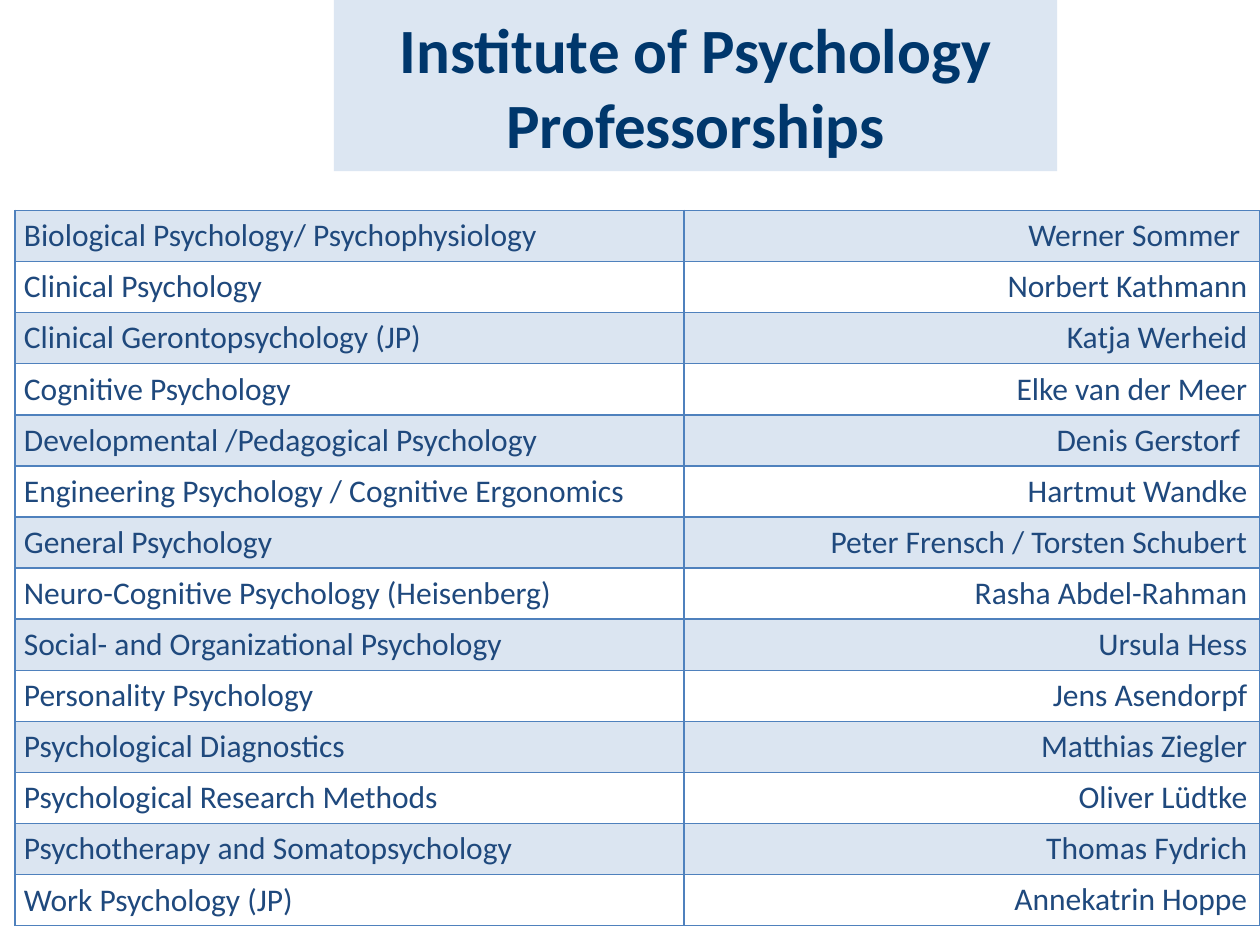
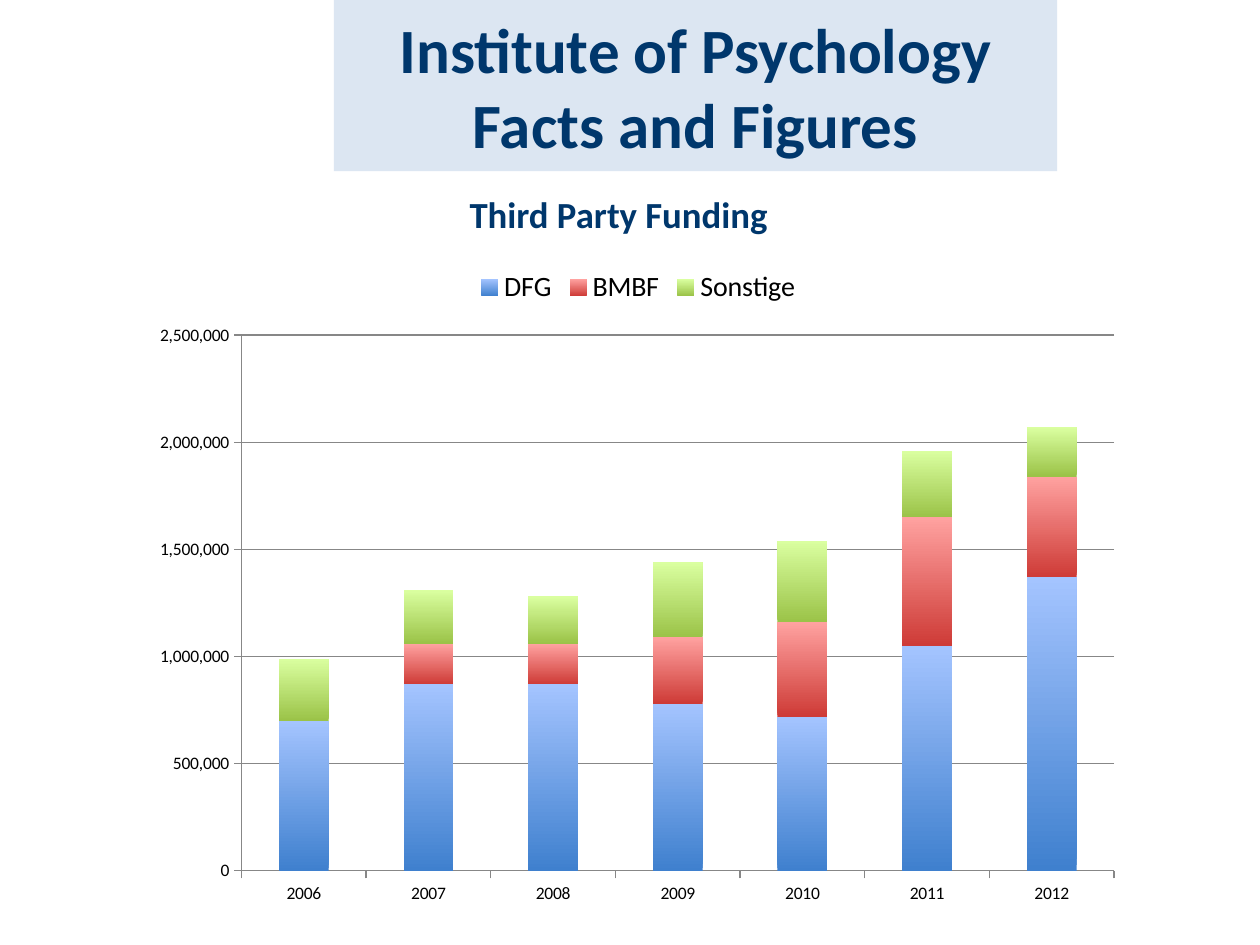
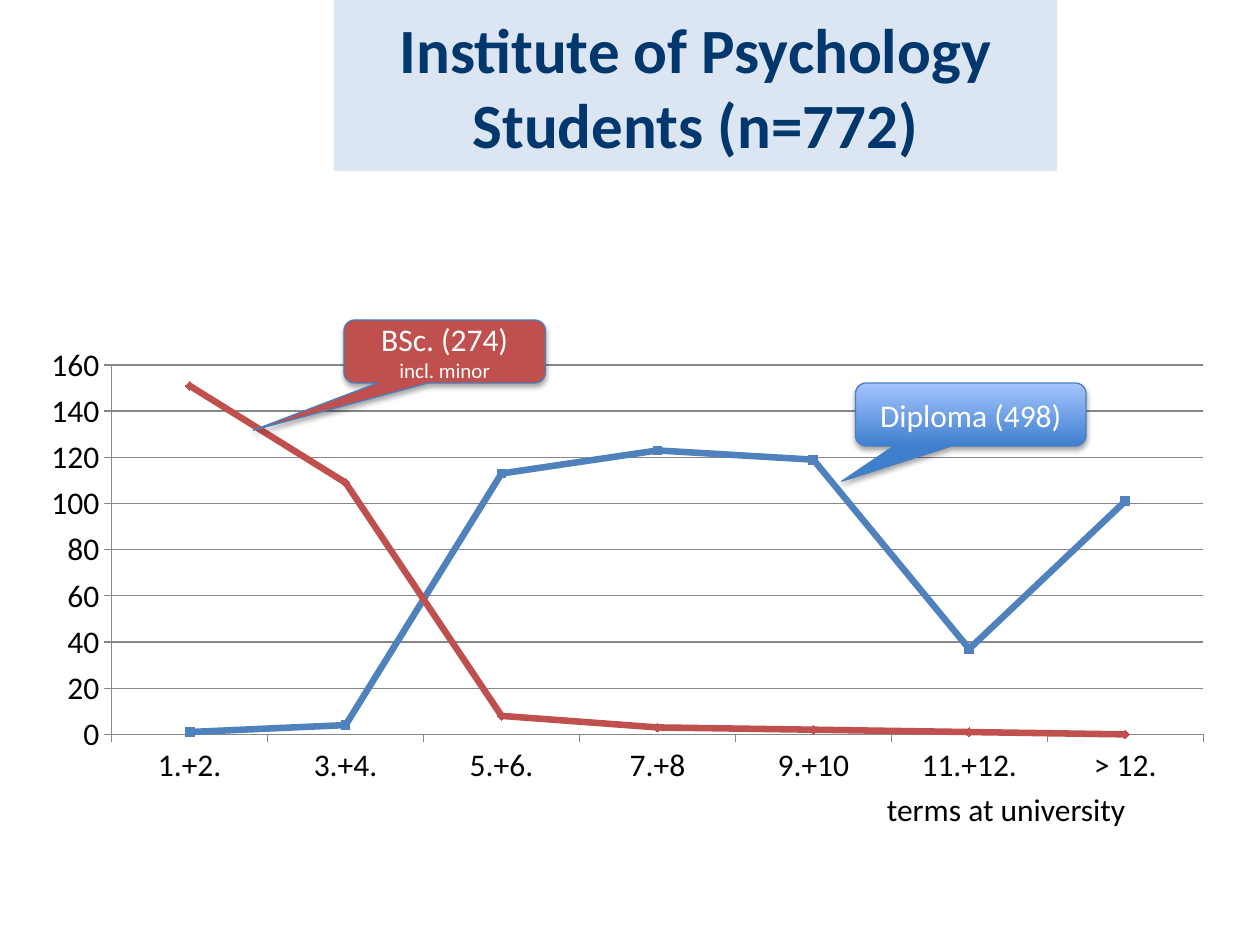
from dataclasses import dataclass

from lxml.etree import SubElement
from pptx import Presentation
from pptx.chart.data import CategoryChartData
from pptx.dml.color import RGBColor
from pptx.enum.chart import XL_CHART_TYPE, XL_LEGEND_POSITION, XL_MARKER_STYLE, XL_TICK_MARK
from pptx.enum.shapes import MSO_SHAPE
from pptx.enum.text import MSO_ANCHOR, MSO_AUTO_SIZE, PP_ALIGN
from pptx.oxml import parse_xml
from pptx.oxml.ns import nsdecls, qn
from pptx.util import Inches, Pt

COLUMNS, ROWS = 100, 75
SLIDE_WIDTH, SLIDE_HEIGHT = Inches(10), Inches(7.5)


class Theme:
    font = "Calibri"
    band = "DCE6F2"
    navy = "00376C"
    table_text = "1F497D"
    blue = "4F81BD"
    red = "C0504D"
    outline = "4B7EBC"
    axis = "878787"
    black = "000000"
    white = "FFFFFF"
    blue_shade = ("3F80CE", "A4C4FF")
    red_shade = ("CE3B37", "FFA2A0")
    green_shade = ("9BC348", "DAFFA0")
    title = {"size": Pt(36), "bold": True}
    heading = {"size": Pt(21), "bold": True}
    body = {"size": Pt(18)}
    legend = {"size": Pt(16)}
    note = {"size": Pt(12)}
    tick = {"size": Pt(10)}
    tight_frame = {
        "margin_left": Inches(0.08), "margin_right": Inches(0.08),
        "margin_top": Inches(0.04), "margin_bottom": Inches(0.04),
        "word_wrap": True,
    }


@dataclass(frozen=True)
class Box:
    left: float
    top: float
    width: float
    height: float

    def inner(self, left, top, width, height):
        return Box(self.left + left, self.top + top, width, height)

    def place(self):
        column, row = SLIDE_WIDTH / COLUMNS, SLIDE_HEIGHT / ROWS
        return (round(self.left * column), round(self.top * row),
                round(self.width * column), round(self.height * row))


BAND = Box(26.5, 0, 57.4, 13.6)
PROFESSORSHIPS = Box(1.2, 16.7, 98.8, 56)
FUNDING = Box(11.3, 14.8, 78.7, 58)
STUDENTS = Box(2.2, 26.8, 95.2, 36.2)

PROFESSORS = [
    ("Biological Psychology/ Psychophysiology", "Werner Sommer "),
    ("Clinical Psychology", "Norbert Kathmann"),
    ("Clinical Gerontopsychology (JP)", "Katja Werheid"),
    ("Cognitive Psychology", "Elke van der Meer"),
    ("Developmental /Pedagogical Psychology", "Denis Gerstorf "),
    ("Engineering Psychology / Cognitive Ergonomics", "Hartmut Wandke"),
    ("General Psychology", "Peter Frensch / Torsten Schubert"),
    ("Neuro-Cognitive Psychology (Heisenberg)", "Rasha Abdel-Rahman"),
    ("Social- and Organizational Psychology", "Ursula Hess"),
    ("Personality Psychology", "Jens Asendorpf"),
    ("Psychological Diagnostics", "Matthias Ziegler"),
    ("Psychological Research Methods", "Oliver Lüdtke"),
    ("Psychotherapy and Somatopsychology", "Thomas Fydrich"),
    ("Work Psychology (JP)", "Annekatrin Hoppe"),
]
YEARS = [str(year) for year in range(2006, 2013)]
FUNDERS = {
    "DFG": (700000, 870000, 870000, 780000, 720000, 1050000, 1370000),
    "BMBF": (0, 190000, 190000, 310000, 440000, 600000, 470000),
    "Sonstige": (290000, 250000, 220000, 350000, 380000, 310000, 230000),
}
TERMS = ["1.+2.", "3.+4.", "5.+6.", "7.+8", "9.+10", "11.+12.", "> 12."]
COHORTS = {
    "Series 1": (1, 4, 113, 123, 119, 37, 101),
    "Series 2": (151, 109, 8, 3, 2, 1, 0),
}


def apply(target, values):
    for name, value in values.items():
        setattr(target, name, value)


def style_font(font, style, color):
    apply(font, {"name": Theme.font, **style})
    font.color.rgb = RGBColor.from_string(color)


def write(frame, lines, color, align=PP_ALIGN.CENTER):
    for index, (text, style) in enumerate(lines):
        paragraph = frame.add_paragraph() if index else frame.paragraphs[0]
        paragraph.alignment = align
        run = paragraph.add_run()
        run.text = text
        style_font(run.font, style, color)


def paint(fill, color):
    fill.solid()
    fill.fore_color.rgb = RGBColor.from_string(color)


def shade(fill, colors):
    fill.gradient()
    fill.gradient_angle = 90
    for stop, color in zip(fill.gradient_stops, colors):
        stop.color.rgb = RGBColor.from_string(color)


def stroke(line, color, width):
    line.color.rgb = RGBColor.from_string(color)
    line.width = Pt(width)


def title_band(slide, text, box=BAND):
    band = slide.shapes.add_shape(MSO_SHAPE.RECTANGLE, *box.place())
    band.shadow.inherit = False
    paint(band.fill, Theme.band)
    band.line.fill.background()
    apply(band.text_frame, {**Theme.tight_frame, "vertical_anchor": MSO_ANCHOR.MIDDLE})
    write(band.text_frame, [(text, Theme.title)], Theme.navy)


def text_box(slide, box, line, color, align, frame_format):
    frame = slide.shapes.add_textbox(*box.place()).text_frame
    apply(frame, frame_format)
    write(frame, [line], color, align)


def frame_cell(cell):
    properties = cell._tc.get_or_add_tcPr()
    for index, side in enumerate(("lnL", "lnR", "lnT", "lnB")):
        properties.insert(index, parse_xml(
            f'<a:{side} {nsdecls("a")} w="12700"><a:solidFill>'
            f'<a:srgbClr val="{Theme.blue}"/></a:solidFill></a:{side}>'))


def tint_cell(cell):
    paint(cell.fill, Theme.blue)
    color = cell._tc.tcPr.find(qn("a:solidFill"))[0]
    SubElement(color, qn("a:alpha")).set("val", "20000")


def professor_table(slide, box):
    table = slide.shapes.add_table(len(PROFESSORS), 2, *box.place()).table
    apply(table, {"first_row": False, "horz_banding": False})
    for column, width in zip(table.columns, (53.1, 45.7)):
        column.width = round(width * SLIDE_WIDTH / COLUMNS)
    subject_format = {
        "margin_left": Inches(0.07), "margin_right": Inches(0.07),
        "margin_top": 0, "margin_bottom": 0,
        "vertical_anchor": MSO_ANCHOR.MIDDLE,
    }
    for row, entry in enumerate(PROFESSORS):
        for column, text in enumerate(entry):
            cell = table.cell(row, column)
            if column == 0:
                apply(cell, subject_format)
            if row % 2:
                cell.fill.background()
            else:
                tint_cell(cell)
            frame_cell(cell)
            align = PP_ALIGN.RIGHT if column else PP_ALIGN.LEFT
            write(cell.text_frame, [(text, Theme.body)], Theme.table_text, align)


def set_plot_area(chart, shares):
    plot_area = chart.element.find(".//" + qn("c:plotArea"))
    for layout in plot_area.findall(qn("c:layout")):
        plot_area.remove(layout)
    modes = '<c:layoutTarget val="inner"/><c:xMode val="edge"/><c:yMode val="edge"/>'
    sizes = "".join(f'<c:{name} val="{share}"/>' for name, share in zip("xywh", shares))
    plot_area.insert(0, parse_xml(
        f'<c:layout {nsdecls("c")}><c:manualLayout>{modes}{sizes}'
        f'</c:manualLayout></c:layout>'))


def add_plain_chart(slide, box, kind, categories, series, tick, scale, plot_shares):
    chart_data = CategoryChartData()
    chart_data.categories = categories
    for name, values in series.items():
        chart_data.add_series(name, values)
    chart = slide.shapes.add_chart(kind, *box.place(), chart_data).chart
    apply(chart, {"has_title": False, "has_legend": False})
    style_font(chart.font, Theme.tick, Theme.black)
    for axis in (chart.category_axis, chart.value_axis):
        apply(axis, {"major_tick_mark": XL_TICK_MARK.OUTSIDE,
                     "minor_tick_mark": XL_TICK_MARK.NONE})
        style_font(axis.tick_labels.font, tick, Theme.black)
        stroke(axis.format.line, Theme.axis, 0.75)
    apply(chart.category_axis, {"has_major_gridlines": False})
    apply(chart.value_axis, {"has_major_gridlines": True, "minimum_scale": 0, **scale})
    stroke(chart.value_axis.major_gridlines.format.line, Theme.axis, 0.75)
    set_plot_area(chart, plot_shares)
    return chart


def funding_region(slide, box):
    text_box(slide, box.inner(8.6, 0, 58.4, 5.5), ("Third Party Funding", Theme.heading),
             Theme.navy, PP_ALIGN.CENTER, Theme.tight_frame)
    chart = add_plain_chart(
        slide, box.inner(0, 5.5, 78.7, 52.5), XL_CHART_TYPE.COLUMN_STACKED,
        YEARS, FUNDERS, Theme.tick,
        {"maximum_scale": 2500000, "major_unit": 500000}, (0.1, 0.12, 0.88, 0.81))
    apply(chart.value_axis.tick_labels,
          {"number_format": "#,##0", "number_format_is_linked": False})
    chart.has_legend = True
    apply(chart.legend, {"position": XL_LEGEND_POSITION.TOP, "include_in_layout": False})
    style_font(chart.legend.font, Theme.legend, Theme.black)
    columns = chart.plots[0]
    apply(columns, {"gap_width": 150, "overlap": 100, "vary_by_categories": False})
    shades = (Theme.blue_shade, Theme.red_shade, Theme.green_shade)
    for funder, colors in zip(columns.series, shades):
        shade(funder.format.fill, colors)


def cohort_callout(slide, box, tip, lines):
    callout = slide.shapes.add_shape(MSO_SHAPE.ROUNDED_RECTANGULAR_CALLOUT, *box.place())
    for index, value in enumerate((*tip, 0.17)):
        callout.adjustments[index] = value
    stroke(callout.line, Theme.outline, 0.75)
    callout.shadow.inherit = False
    effects = callout.element.spPr.find(qn("a:effectLst"))
    effects.append(parse_xml(
        f'<a:outerShdw {nsdecls("a")} blurRad="{Pt(3.1)}" dist="{Pt(1.8)}" '
        f'dir="5400000" rotWithShape="0"><a:srgbClr val="{Theme.black}">'
        f'<a:alpha val="35000"/></a:srgbClr></a:outerShdw>'))
    apply(callout.text_frame, {"word_wrap": True, "vertical_anchor": MSO_ANCHOR.MIDDLE})
    write(callout.text_frame, lines, Theme.white)
    return callout


def students_region(slide, box):
    chart = add_plain_chart(
        slide, box, XL_CHART_TYPE.LINE_MARKERS, TERMS, COHORTS, Theme.body,
        {"maximum_scale": 160, "major_unit": 20}, (0.07, 0.06, 0.91, 0.81))
    chart.plots[0].vary_by_categories = False
    looks = ((Theme.blue, XL_MARKER_STYLE.SQUARE), (Theme.red, XL_MARKER_STYLE.DIAMOND))
    for cohort, (color, marker) in zip(chart.plots[0].series, looks):
        cohort.smooth = False
        stroke(cohort.format.line, color, 3.75)
        apply(cohort.marker, {"style": marker, "size": 5})
        paint(cohort.marker.format.fill, color)
        stroke(cohort.marker.format.line, color, 0.75)
    diploma = cohort_callout(slide, box.inner(65.7, 3.6, 18.3, 5), (-0.56, 1.06),
                             [("Diploma (498)", Theme.body)])
    shade(diploma.fill, Theme.blue_shade)
    bachelor = cohort_callout(slide, box.inner(25.1, -1.4, 16, 5), (-0.95, 1.25),
                              [("BSc. (274)", Theme.body), ("incl. minor", Theme.note)])
    paint(bachelor.fill, Theme.red)
    text_box(slide, box.inner(67.2, 35.4, 24.2, 4), ("terms at university", Theme.body),
             Theme.black, PP_ALIGN.LEFT,
             {"word_wrap": True, "auto_size": MSO_AUTO_SIZE.SHAPE_TO_FIT_TEXT})


def main():
    deck = Presentation()
    apply(deck, {"slide_width": SLIDE_WIDTH, "slide_height": SLIDE_HEIGHT})
    pages = [
        ("Professorships", professor_table, PROFESSORSHIPS),
        ("Facts and Figures", funding_region, FUNDING),
        ("Students (n=772)", students_region, STUDENTS),
    ]
    for topic, fill_region, box in pages:
        slide = deck.slides.add_slide(deck.slide_layouts[6])
        title_band(slide, f"Institute of Psychology {topic}")
        fill_region(slide, box)
    deck.save("out.pptx")


if __name__ == "__main__":
    main()
